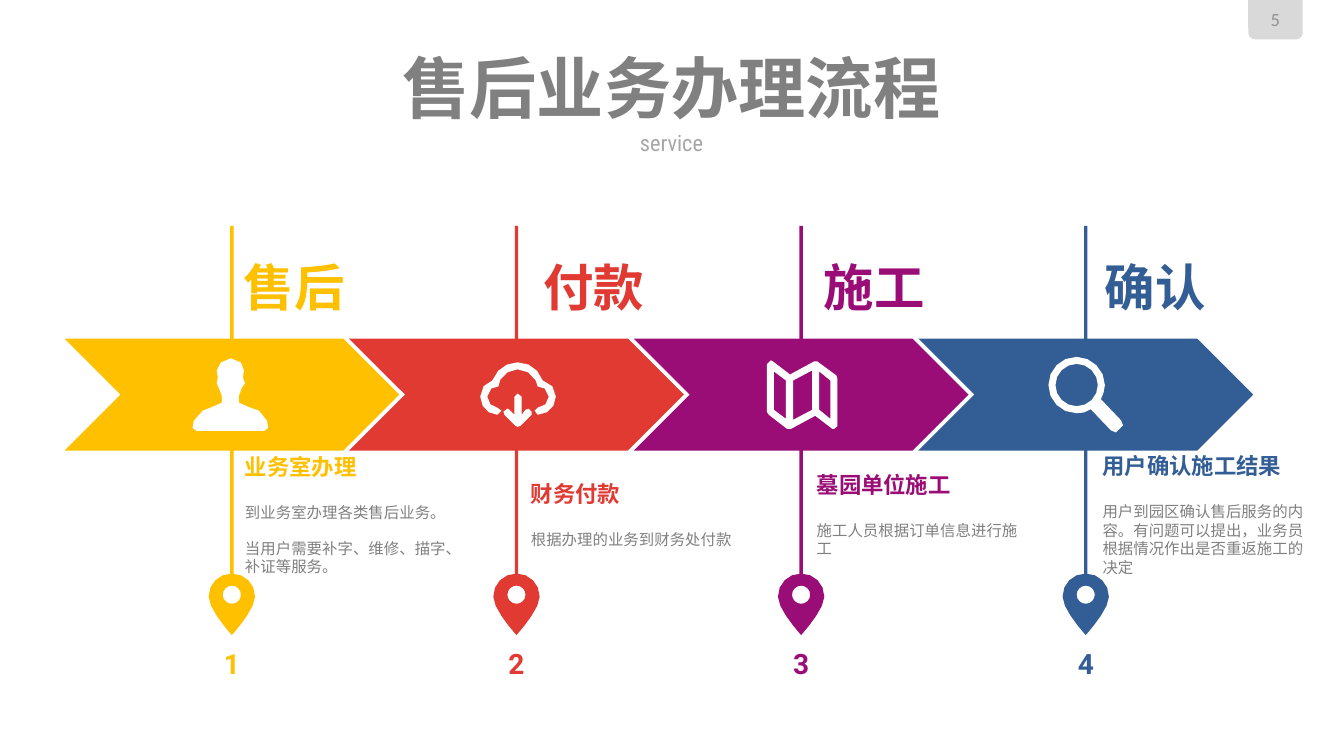
import math

from pptx import Presentation, util as u
from pptx.dml.color import RGBColor
from pptx.enum import shapes, text

COLOURS = {
    "gold": "FFC000", "red": "E03A33", "purple": "9B0D76", "blue": "335E95",
    "title": "808080", "subtitle": "A6A6A6", "tab": "D9D9D9", "number": "929292",
    "icon": "FFFFFF",
}
COLUMNS, ROWS = 1333, 750
CELL = u.Inches(0.01)
STEP_PITCH, NOTE_PITCH = 282.3, 283.5


def circle(x, y, radius, sides=16):
    turns = [2 * math.pi * i / sides for i in range(sides)]
    return [(x + radius * math.cos(t), y + radius * math.sin(t)) for t in turns]


PIN = [
    [(0, 0), (-13, 0, -23, 10, -23, 23), (-23, 36, 0, 61, 0, 61),
     (0, 61, 23, 36, 23, 23), (23, 10, 13, 0, 0, 0)],
    circle(0, 21, 9),
]
PERSON = [
    [(75, 69), (75, 71, 73, 72, 71, 72), (4, 72), (2, 72, 0, 71, 0, 69),
     (0, 69, 0, 56, 10, 52), (15, 49, 13, 51, 20, 48), (28, 45, 29, 44, 29, 44),
     (29, 37), (29, 37, 27, 35, 26, 29), (24, 29, 24, 26, 24, 25),
     (24, 24, 23, 19, 25, 19), (24, 16, 24, 13, 24, 12), (24, 6, 30, 1, 38, 0),
     (47, 1, 51, 6, 51, 12), (51, 13, 51, 16, 50, 19), (53, 19, 52, 24, 52, 25),
     (52, 26, 51, 29, 49, 29), (48, 35, 46, 37, 46, 37), (46, 44),
     (46, 44, 47, 45, 55, 48), (62, 51, 60, 49, 66, 52), (75, 56, 75, 69, 75, 69)],
]
CLOUD = [
    [(57, 52), (55, 52, 54, 50, 54, 48), (54, 46, 55, 45, 57, 45),
     (63, 45, 68, 40, 68, 34), (68, 31, 66, 28, 64, 26), (62, 24, 59, 24, 57, 24),
     (57, 22, 56, 20, 55, 18), (51, 11, 45, 7, 37, 7), (30, 7, 24, 11, 20, 17),
     (18, 20, 18, 22, 18, 24), (15, 24, 13, 24, 11, 26), (8, 28, 7, 31, 7, 34),
     (7, 40, 12, 45, 17, 45), (20, 45, 21, 46, 21, 48), (21, 50, 20, 52, 17, 52),
     (8, 52, 0, 44, 0, 34), (0, 26, 5, 20, 12, 18), (16, 7, 26, 0, 37, 0),
     (49, 0, 58, 7, 62, 18), (70, 20, 75, 26, 75, 34), (75, 44, 67, 52, 57, 52)],
    [(27, 46), (28, 46, 29, 46, 29, 47), (34, 52), (34, 34),
     (34, 32, 35, 31, 37, 31), (39, 31, 41, 32, 41, 34), (41, 52), (45, 47),
     (46, 46, 47, 46, 48, 46), (50, 46, 51, 47, 51, 49), (51, 50, 51, 51, 51, 52),
     (40, 63), (39, 64, 39, 64, 37, 64), (36, 64, 35, 64, 35, 63), (24, 52),
     (23, 51, 23, 50, 23, 49), (23, 47, 25, 46, 27, 46)],
]
MAP = [
    [(70, 65), (70, 67, 69, 68, 67, 68), (65, 68), (48, 55), (24, 68), (20, 68),
     (2, 54), (1, 53, 0, 52, 0, 51), (0, 4), (0, 2, 2, 0, 4, 0), (6, 1), (23, 14),
     (47, 1), (48, 0, 49, 0, 50, 1), (69, 15), (70, 16, 70, 17, 70, 18)],
    [(19, 58), (19, 20), (7, 11), (7, 49)],
    [(45, 10), (26, 20), (26, 59), (45, 49)],
    [(63, 20), (52, 11), (52, 49), (63, 58)],
]
MAGNIFIER = [
    [(72, 63), (73, 64, 74, 66, 74, 68), (74, 71, 71, 75, 67, 75),
     (65, 75, 64, 74, 62, 73), (42, 52), (38, 55, 33, 56, 28, 56),
     (12, 56, 0, 43, 0, 28), (0, 13, 12, 0, 28, 0), (43, 0, 56, 13, 56, 28),
     (56, 33, 54, 38, 52, 42)],
    circle(28, 28, 21),
]

STEPS = [
    ("售后", 292, "gold", PERSON, (-39, -36), "业务室办理",
     ["到业务室办理各类售后业务。", "当用户需要补字、维修、描字、补证等服务。"]),
    ("付款", 589, "red", CLOUD, (-36, -32), "财务付款", ["根据办理的业务到财务处付款"]),
    ("施工", 867, "purple", MAP, (-34, -34), "墓园单位施工",
     ["施工人员根据订单信息进行施工"]),
    ("确认", 1146, "blue", MAGNIFIER, (-37, -37.5), "用户确认施工结果",
     ["用户到园区确认售后服务的内容。有问题可以提出，业务员根据情况作出是否重返施工的决定"]),
]


def place(box):
    return [round(length * CELL) for length in box]


def paint(shape, colour):
    shape.shadow.inherit = False
    shape.fill.solid()
    shape.fill.fore_color.rgb = RGBColor.from_string(COLOURS[colour])
    shape.line.fill.background()


def add_block(page, kind, box, colour):
    shape = page.shapes.add_shape(kind, *place(box))
    paint(shape, colour)
    return shape


def flatten(contour, reach=9):
    points = [contour[0]]
    for part in contour[1:]:
        x, y = points[-1]
        if len(part) == 2:
            points.append(part)
            continue
        pieces = max(1, round(math.dist((x, y), part[4:]) / reach))
        for t in (i / pieces for i in range(1, pieces + 1)):
            weights = ((1 - t) ** 3, 3 * t * (1 - t) ** 2, 3 * t * t * (1 - t), t ** 3)
            points.append((sum(w * a for w, a in zip(weights, (x, *part[::2]))),
                           sum(w * a for w, a in zip(weights, (y, *part[1::2])))))
    return points


def add_outline(page, contours, left, top, colour):
    builder = None
    for contour in contours:
        first, *others = [place((left + x, top + y)) for x, y in flatten(contour)]
        if builder is None:
            builder = page.shapes.build_freeform(*first)
        else:
            builder.move_to(*first)
        builder.add_line_segments(others, close=True)
    paint(builder.convert_to_shape(), colour)


def prepare(frame):
    frame.margin_left = frame.margin_right = frame.margin_top = frame.margin_bottom = 0
    frame.word_wrap = True
    frame.auto_size = text.MSO_AUTO_SIZE.NONE
    frame.vertical_anchor = text.MSO_ANCHOR.MIDDLE
    return frame


def add_frame(page, box):
    return prepare(page.shapes.add_textbox(*place(box)).text_frame)


def write(frame, words, size, colour, font="Roboto", bold=False, align="CENTER", after=0):
    para = frame.paragraphs[0] if not frame.text else frame.add_paragraph()
    para.alignment = getattr(text.PP_ALIGN, align)
    para.space_after = u.Pt(after)
    span = para.add_run()
    span.text = words
    span.font.size = u.Pt(size)
    span.font.name = font
    span.font.bold = bold
    span.font.color.rgb = RGBColor.from_string(COLOURS[colour])


def add_heading(page, box):
    left, top, width, height = box
    title = page.shapes.title
    title.left, title.top, title.width, title.height = place((left, top, width, 72))
    write(prepare(title.text_frame), "售后业务办理流程", 48, "title", bold=True)
    subtitle = add_frame(page, (left, top + height - 25, width, 25))
    write(subtitle, "service", 16, "subtitle", font="Roboto Condensed")


def add_page_number(page, box):
    left, top, width, height = box
    tab = add_block(page, shapes.MSO_SHAPE.ROUND_2_SAME_RECTANGLE, box, "tab")
    tab.rotation = 180
    number = add_frame(page, (left + 5, top + 8, width - 10, 22))
    write(number, "5", 13.3, "number", font="Calibri")


def add_step(page, box, index, step):
    name, name_centre, colour, icon, icon_offset, heading, notes = step
    left, top, width, height = box
    axis = left + width / 2
    middle = top + 167.5
    add_block(page, shapes.MSO_SHAPE.RECTANGLE, (axis - 1.7, top, 3.4, 350), colour)
    arrow = add_block(page, shapes.MSO_SHAPE.NOTCHED_RIGHT_ARROW,
                      (left, top + 112, width, 111), colour)
    arrow.adjustments[0], arrow.adjustments[1] = 1, 0.5
    add_outline(page, PIN, axis, top + 345, colour)
    add_outline(page, icon, axis + icon_offset[0], middle + icon_offset[1], "icon")
    write(add_frame(page, (name_centre - 63, top + 29.5, 126, 61)), name, 36, colour, bold=True)
    write(add_frame(page, (axis - 79, top + height - 34, 158, 34)),
          str(index + 1), 20, colour, bold=True)
    note = add_frame(page, (243 + NOTE_PITCH * index, top + 224, 212, 125))
    write(note, heading, 16, colour, bold=True, align="LEFT", after=16.5)
    for line in notes:
        after = 0 if line == notes[-1] else 12
        write(note, line, 11, "title", font="Roboto Condensed", align="LEFT", after=after)


def main():
    deck = Presentation()
    deck.slide_width, deck.slide_height = place((COLUMNS, ROWS))
    page = deck.slides.add_slide(deck.slide_layouts[5])
    add_page_number(page, (1238, 0, 54, 39))
    add_heading(page, (56, 50, 1220, 104))
    for index, step in enumerate(STEPS):
        add_step(page, (64 + STEP_PITCH * index, 224, 332, 451), index, step)
    deck.save("out.pptx")


if __name__ == "__main__":
    main()
